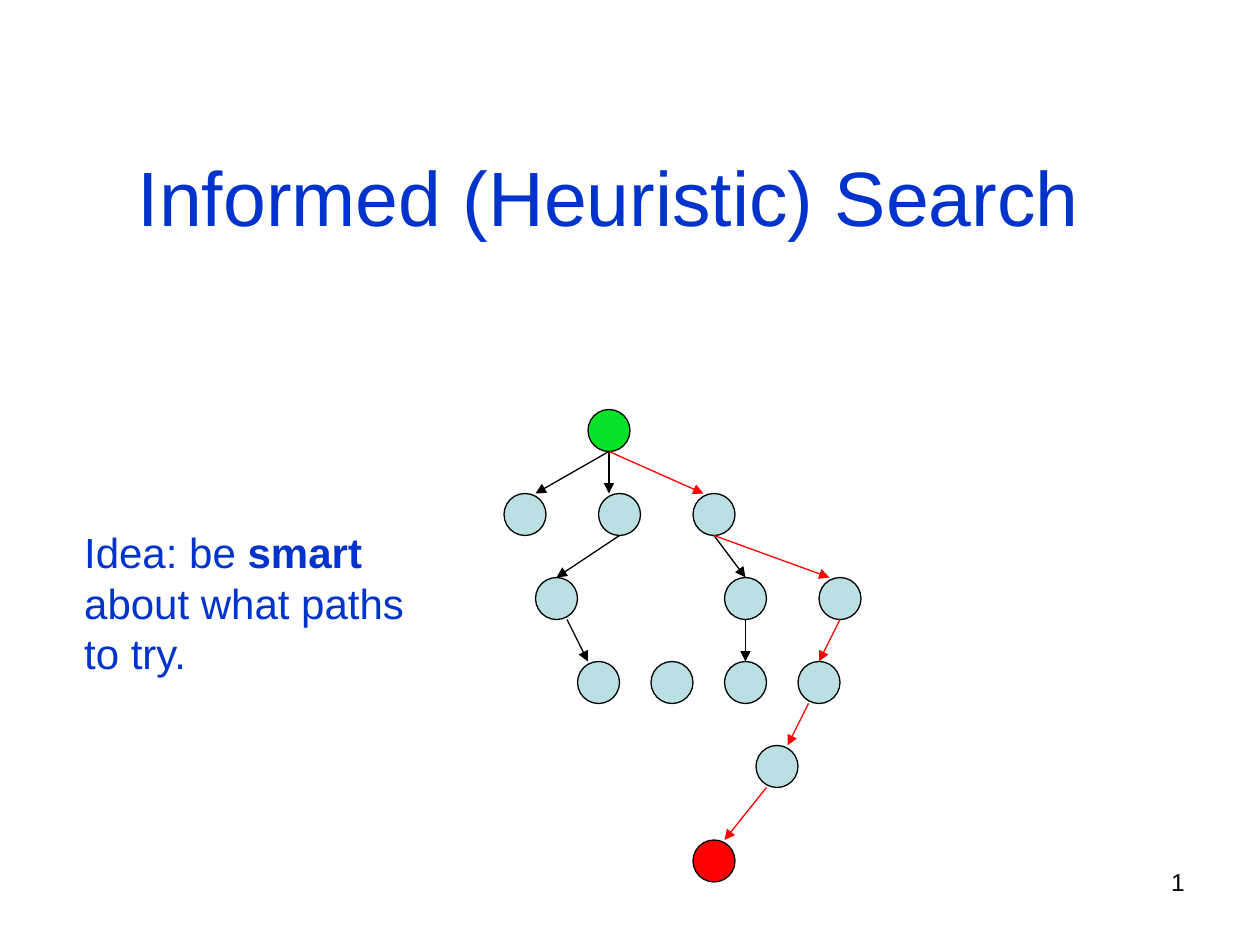
from dataclasses import dataclass
from lxml import etree
from pptx import Presentation
from pptx.dml.color import RGBColor
from pptx.enum.shapes import MSO_CONNECTOR, MSO_SHAPE
from pptx.enum.text import MSO_ANCHOR, MSO_AUTO_SIZE, PP_ALIGN
from pptx.oxml.ns import qn
from pptx.util import Inches, Pt

OVAL = MSO_SHAPE.OVAL
LINE = MSO_CONNECTOR.STRAIGHT
TOP, MID = MSO_ANCHOR.TOP, MSO_ANCHOR.MIDDLE
LEFT, CENTER, RIGHT = PP_ALIGN.LEFT, PP_ALIGN.CENTER, PP_ALIGN.RIGHT
FIT = MSO_AUTO_SIZE.SHAPE_TO_FIT_TEXT
COLS, ROWS = 120, 90


@dataclass(frozen=True)
class Theme:
    font: str = "Arial"
    ink: str = "000000"
    blue: str = "0033CC"
    start: str = "07E126"
    node: str = "BBE0E3"
    goal: str = "FF0000"
    path_ink: str = "FF0000"
    title: int = 44
    body: int = 24
    small: int = 14
    stroke: float = 0.75
    size: int = 4


class Deck:
    def __init__(self, theme):
        self.theme = theme
        self.file = Presentation()
        self.file.slide_width = Inches(10)
        self.file.slide_height = Inches(7.5)
        self.slide = self.file.slides.add_slide(self.file.slide_layouts[6])

    def grid(self, col, row):
        return (round(self.file.slide_width * col / COLS),
                round(self.file.slide_height * row / ROWS))

    def text(self, box, lines, size, color, align=LEFT, anchor=TOP, wrap=True):
        shape = self.slide.shapes.add_textbox(*self.grid(*box[:2]), *self.grid(*box[2:]))
        frame = shape.text_frame
        frame.word_wrap = wrap
        frame.vertical_anchor = anchor
        if not wrap:
            frame.auto_size = FIT
        for i, line in enumerate(lines):
            para = frame.add_paragraph() if i else frame.paragraphs[0]
            para.alignment = align
            for words, bold in line:
                run = para.add_run()
                run.text = words
                run.font.name = self.theme.font
                run.font.size = Pt(size)
                run.font.bold = bold
                run.font.color.rgb = RGBColor.from_string(color)

    def pen(self, line, color):
        line.width = Pt(self.theme.stroke)
        line.color.rgb = RGBColor.from_string(color)

    def node(self, col, row, color):
        size = self.theme.size
        shape = self.slide.shapes.add_shape(OVAL, *self.grid(col, row), *self.grid(size, size))
        shape.shadow.inherit = False
        shape.fill.solid()
        shape.fill.fore_color.rgb = RGBColor.from_string(color)
        self.pen(shape.line, self.theme.ink)

    def arrow(self, start, end, color):
        link = self.slide.shapes.add_connector(LINE, *self.grid(*start), *self.grid(*end))
        self.pen(link.line, color)
        etree.SubElement(link.line._get_or_add_ln(), qn("a:tailEnd"), type="triangle")
        etree.SubElement(link._element.spPr, qn("a:effectLst"))


def main():
    theme = Theme()
    deck = Deck(theme)
    deck.text((86, 82, 28, 6.2), [[("1", False)]], theme.small, theme.ink, RIGHT)
    deck.text((7, 9, 102, 19.3), [[("Informed (Heuristic) Search", False)]],
              theme.title, theme.blue, CENTER, MID)

    tops = (39, 47, 55, 63, 71, 80)
    tree = ((56,), (48, 57, 66), (51, 69, 78), (55, 62, 69, 76), (72,), (66,))
    fills = {0: theme.start, len(tops) - 1: theme.goal}
    for tier, cols in enumerate(tree):
        for col in cols:
            deck.node(col, tops[tier], fills.get(tier, theme.node))

    plain = ((0, 58, 51), (0, 58, 58), (1, 59, 53), (1, 68, 71),
             (2, 54, 56), (2, 71, 71))
    route = ((0, 58, 67), (1, 68, 79), (2, 80, 78), (3, 77, 75), (4, 73, 69))
    for links, color in ((plain, theme.ink), (route, theme.path_ink)):
        for tier, start, end in links:
            deck.arrow((start, tops[tier] + theme.size), (end, tops[tier + 1]), color)

    idea = [[("Idea: be ", False), ("smart", True)],
            [("about what paths", False)],
            [("to try.", False)]]
    deck.text((6.84, 49.6, 32.9, 15.6), idea, theme.body, theme.blue, wrap=False)
    deck.file.save("out.pptx")


if __name__ == "__main__":
    main()
